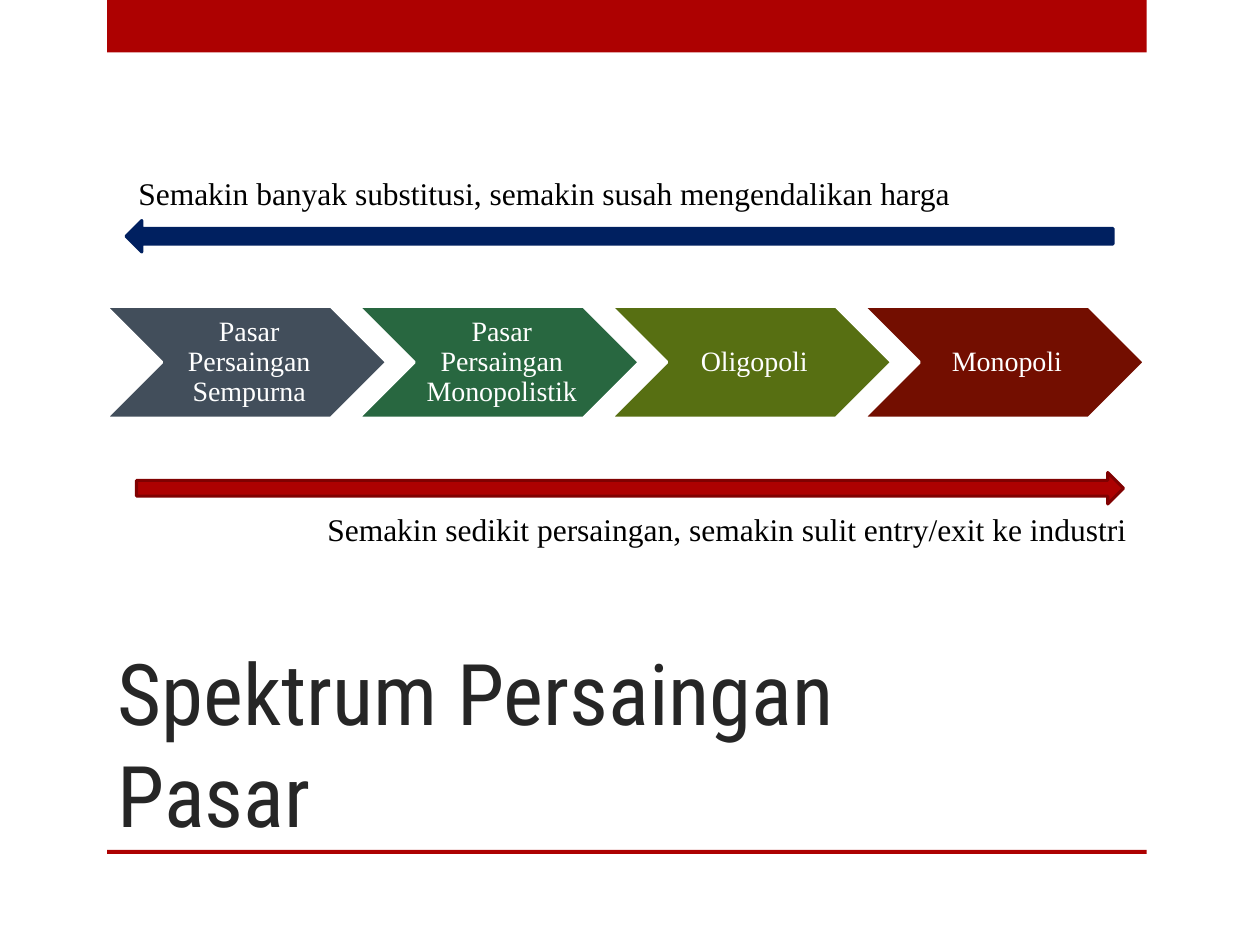
from dataclasses import dataclass

from pptx import Presentation
from pptx.dml.color import RGBColor
from pptx.enum import shapes, text
from pptx.util import Pt


@dataclass(frozen=True)
class Theme:
    accent: str = "AD0101"
    accent_edge: str = "800101"
    navy: str = "002060"
    white: str = "FFFFFF"
    black: str = "000000"
    heading: str = "262626"
    heading_font: str = "Roboto Condensed"
    body_font: str = "Times New Roman"
    heading_size: float = 48.6
    caption_size: float = 18
    stage_size: float = 16
    outline: float = 1.75


THEME = Theme()
SHAPE = shapes.MSO_SHAPE

STAGES = [
    ("Pasar Persaingan Sempurna", "424E5B"),
    ("Pasar Persaingan Monopolistik", "286740"),
    ("Oligopoli", "576F12"),
    ("Monopoli", "730E00"),
]


def apply(target, values):
    for name, value in values.items():
        setattr(target, name, value)


def write(shape, words, font, size, color, frame_format, para_format):
    frame = shape.text_frame
    apply(frame, {"word_wrap": True, **frame_format})
    para = frame.paragraphs[0]
    apply(para, para_format)
    span = para.add_run()
    span.text = words
    apply(span.font, {"name": font, "size": Pt(size)})
    span.font.color.rgb = RGBColor.from_string(color)


def add_filled(page, kind, box, fill, edge=None):
    shape = page.shapes.add_shape(kind, *map(Pt, box))
    shape.shadow.inherit = False
    shape.fill.solid()
    shape.fill.fore_color.rgb = RGBColor.from_string(fill)
    if edge:
        shape.line.color.rgb = RGBColor.from_string(edge)
        shape.line.width = Pt(THEME.outline)
    else:
        shape.line.fill.background()
    return shape


def add_frame_bars(page, box):
    left, top, width, height = box
    rule = 2.4
    add_filled(page, SHAPE.RECTANGLE, (left, top, width, 30), THEME.accent)
    add_filled(page, SHAPE.RECTANGLE, (left, top + height - rule, width, rule),
               THEME.accent)


def add_title(page, box, words):
    title = page.shapes.title
    apply(title, dict(zip(("left", "top", "width", "height"), map(Pt, box))))
    write(title, words, THEME.heading_font, THEME.heading_size, THEME.heading,
          {"vertical_anchor": text.MSO_ANCHOR.BOTTOM,
           "auto_size": text.MSO_AUTO_SIZE.NONE},
          {"alignment": text.PP_ALIGN.LEFT})


def add_stages(page, box):
    """Spread the market types over the box as overlapping chevrons."""
    left, top, width, height = box
    chevron_width = 160.6
    step = (width - chevron_width) / (len(STAGES) - 1)
    for index, (name, fill) in enumerate(STAGES):
        chevron = add_filled(page, SHAPE.CHEVRON,
                             (left + index * step, top, chevron_width, height),
                             fill, THEME.white)
        write(chevron, name, THEME.body_font, THEME.stage_size, THEME.white,
              {"vertical_anchor": text.MSO_ANCHOR.MIDDLE,
               "margin_left": Pt(5), "margin_right": Pt(1.6),
               "margin_top": Pt(1.6), "margin_bottom": Pt(1.6)},
              {"alignment": text.PP_ALIGN.CENTER, "line_spacing": 0.9})


def add_trend(page, kind, box, fill, edge, words, caption_box):
    """Add a block arrow with its caption, which is placed from the arrow's corner."""
    left, top = box[:2]
    add_filled(page, kind, box, fill, edge)
    dx, dy, width, height = caption_box
    caption = page.shapes.add_textbox(
        *map(Pt, (left + dx, top + dy, width, height)))
    write(caption, words, THEME.body_font, THEME.caption_size, THEME.black,
          {"auto_size": text.MSO_AUTO_SIZE.SHAPE_TO_FIT_TEXT}, {})


def main():
    deck = Presentation()
    apply(deck, {"slide_width": Pt(720), "slide_height": Pt(540)})
    page = deck.slides.add_slide(deck.slide_layouts[5])
    add_frame_bars(page, (61.2, 0, 594, 488))
    add_title(page, (60, 360, 534, 126), "Spektrum Persaingan Pasar")
    add_stages(page, (60.4, 175, 593.6, 64))
    add_trend(page, SHAPE.RIGHT_ARROW, (78, 270, 564, 18),
              THEME.accent, THEME.accent_edge,
              "Semakin sedikit persaingan, semakin sulit entry/exit ke industri",
              (102, 18, 474, 29))
    add_trend(page, SHAPE.LEFT_ARROW, (72, 126, 564, 18),
              THEME.navy, THEME.navy,
              "Semakin banyak substitusi, semakin susah mengendalikan harga",
              (0, -30, 504, 29))
    deck.save("out.pptx")


if __name__ == "__main__":
    main()
